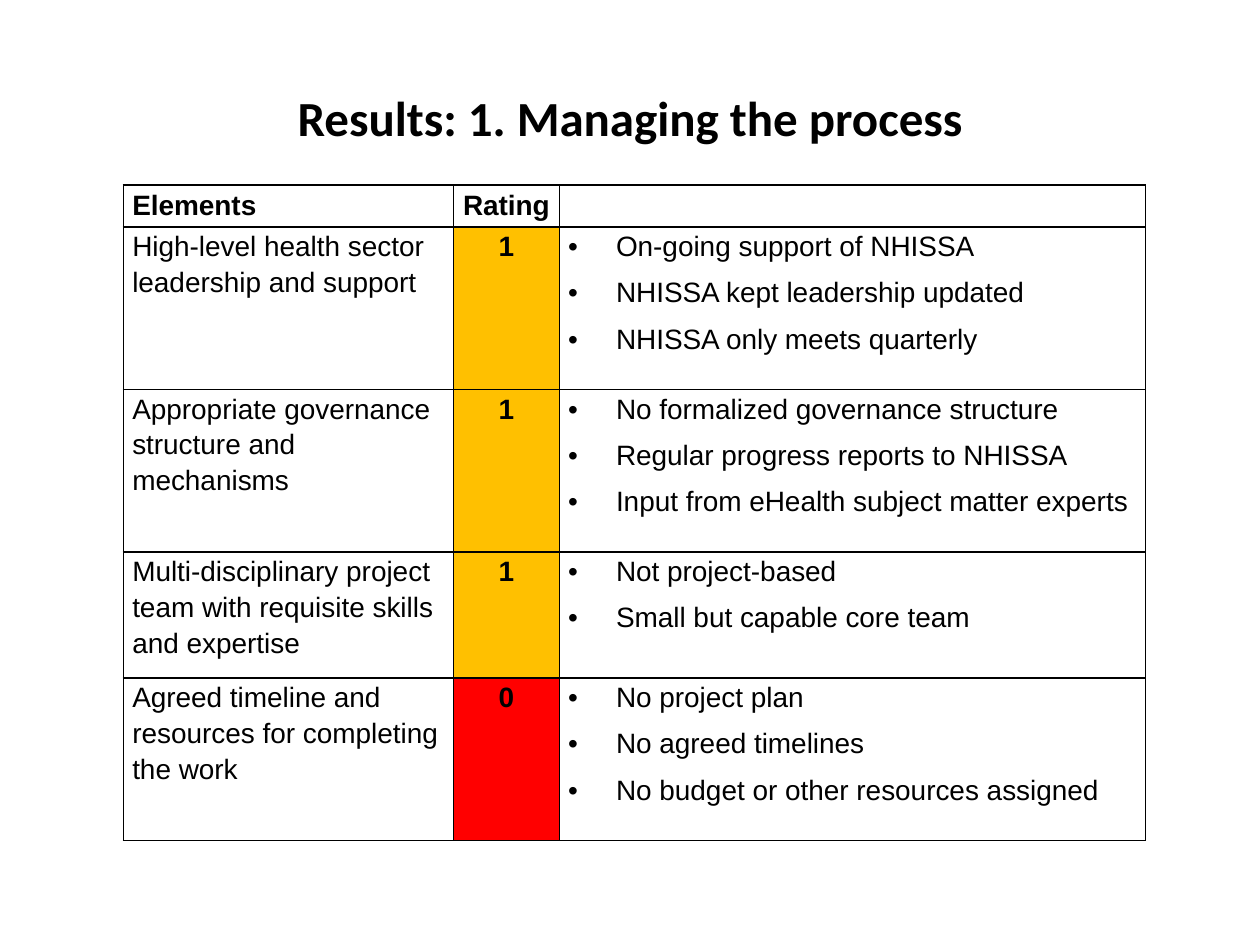
from typing import NamedTuple

from lxml import etree
from pptx import Presentation, util as u
from pptx.dml.color import RGBColor
from pptx.enum import text
from pptx.oxml.ns import qn

COLORS = {"ink": "000000", "partial": "FFC000", "absent": "FF0000"}
RATING_COLORS = {"1": "partial", "0": "absent"}
COLUMN_WIDTHS = (2.62, 0.84, 4.65)
ROW_HEIGHTS = (0.33, 1.29, 1.29, 1, 1.29)
BULLET_INDENT = u.Inches(0.38)
CELL_FORMAT = {
    "margin_left": u.Inches(0.07),
    "margin_right": u.Inches(0.07),
    "margin_top": 0,
    "margin_bottom": 0,
    "vertical_anchor": text.MSO_ANCHOR.TOP,
}
PARAGRAPH_FORMAT = {
    "line_spacing": 1.15,
    "space_before": u.Pt(3),
    "space_after": u.Pt(3),
}


class Element(NamedTuple):
    name: str
    rating: str
    findings: tuple[str, ...]


ELEMENTS = (
    Element("High-level health sector leadership and support", "1", (
        "On-going support of NHISSA",
        "NHISSA kept leadership updated",
        "NHISSA only meets quarterly")),
    Element("Appropriate governance structure and mechanisms", "1", (
        "No formalized governance structure",
        "Regular progress reports to NHISSA",
        "Input from eHealth subject matter experts")),
    Element("Multi-disciplinary project team with requisite skills and expertise", "1", (
        "Not project-based",
        "Small but capable core team")),
    Element("Agreed timeline and resources for completing the work", "0", (
        "No project plan",
        "No agreed timelines",
        "No budget or other resources assigned")),
)


def apply_format(target, values: dict) -> None:
    for name, value in values.items():
        setattr(target, name, value)


def color(key: str) -> RGBColor:
    return RGBColor.from_string(COLORS[key])


def write(paragraph, words: str, size: float, face: str, bold: bool) -> None:
    run = paragraph.add_run()
    run.text = words
    apply_format(run.font, {"size": u.Pt(size), "name": face, "bold": bold})
    run.font.color.rgb = color("ink")


def add_bullet(paragraph) -> None:
    properties = paragraph._p.get_or_add_pPr()
    properties.set("marL", str(BULLET_INDENT))
    properties.set("indent", str(-BULLET_INDENT))
    etree.SubElement(properties, qn("a:buFont"), typeface="Arial")
    etree.SubElement(properties, qn("a:buChar"), char="•")


def add_borders(cell) -> None:
    properties = cell._tc.get_or_add_tcPr()
    for place, side in enumerate(("lnL", "lnR", "lnT", "lnB")):
        line = etree.Element(qn(f"a:{side}"), w=str(u.Pt(1)))
        fill = etree.SubElement(line, qn("a:solidFill"))
        etree.SubElement(fill, qn("a:srgbClr"), val=COLORS["ink"])
        properties.insert(place, line)


def fill_cell(cell, lines: tuple[str, ...], bold: bool = False, centered: bool = False,
              bulleted: bool = False, fill: str | None = None) -> None:
    apply_format(cell, CELL_FORMAT)
    if fill:
        cell.fill.solid()
        cell.fill.fore_color.rgb = color(fill)
    else:
        cell.fill.background()
    add_borders(cell)
    for index, words in enumerate(lines):
        frame = cell.text_frame
        paragraph = frame.add_paragraph() if index else frame.paragraphs[0]
        apply_format(paragraph, PARAGRAPH_FORMAT)
        paragraph.alignment = text.PP_ALIGN.CENTER if centered else text.PP_ALIGN.LEFT
        if bulleted:
            add_bullet(paragraph)
        write(paragraph, words, 16, "Arial", bold)


def add_title(slide, width: int, height: int) -> None:
    title = slide.shapes.add_textbox(
        int(width * 0.05), int(height * 0.04), int(width * 0.9), u.Inches(1.25))
    apply_format(title.text_frame, {
        "word_wrap": True, "vertical_anchor": text.MSO_ANCHOR.MIDDLE})
    heading = title.text_frame.paragraphs[0]
    heading.alignment = text.PP_ALIGN.CENTER
    write(heading, "Results: 1. Managing the process", 28, "Calibri", True)


def add_ratings(slide) -> None:
    table = slide.shapes.add_table(
        len(ROW_HEIGHTS), len(COLUMN_WIDTHS), u.Inches(0.98), u.Inches(1.47),
        u.Inches(sum(COLUMN_WIDTHS)), u.Inches(sum(ROW_HEIGHTS))).table
    apply_format(table, {"first_row": False, "horz_banding": False})
    for column, width in zip(table.columns, COLUMN_WIDTHS):
        column.width = u.Inches(width)
    for row, height in zip(table.rows, ROW_HEIGHTS):
        row.height = u.Inches(height)

    # Header row
    fill_cell(table.cell(0, 0), ("Elements",), bold=True)
    fill_cell(table.cell(0, 1), ("Rating",), bold=True, centered=True)
    fill_cell(table.cell(0, 2), ())

    # One row per rated element
    for row, element in enumerate(ELEMENTS, start=1):
        fill_cell(table.cell(row, 0), (element.name,))
        fill_cell(table.cell(row, 1), (element.rating,), bold=True, centered=True,
                  fill=RATING_COLORS[element.rating])
        fill_cell(table.cell(row, 2), element.findings, bulleted=True)


def main() -> None:
    deck = Presentation()
    apply_format(deck, {"slide_width": u.Inches(10), "slide_height": u.Inches(7.5)})
    slide = deck.slides.add_slide(deck.slide_layouts[6])
    add_title(slide, deck.slide_width, deck.slide_height)
    add_ratings(slide)
    deck.save("out.pptx")


if __name__ == "__main__":
    main()
